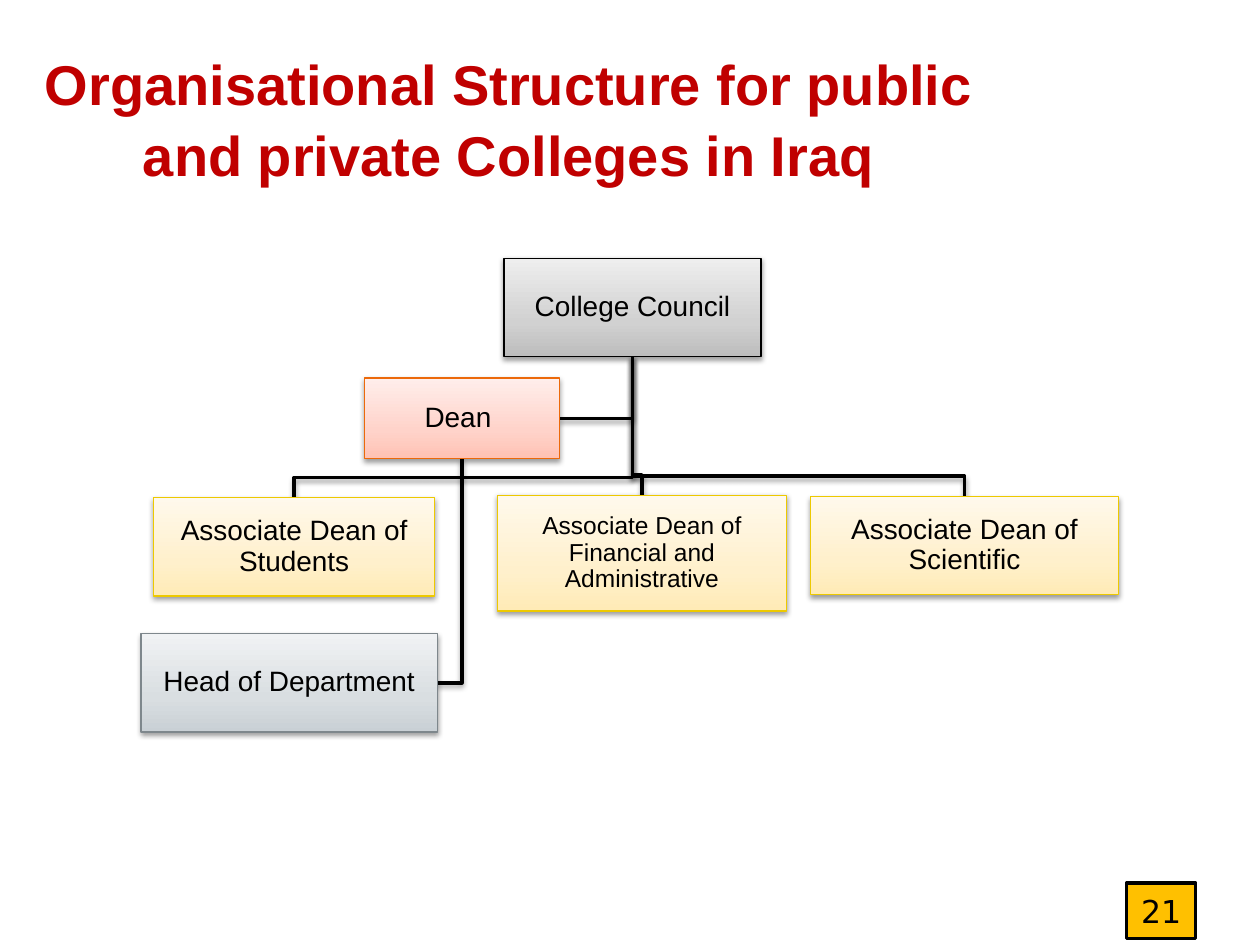
from dataclasses import dataclass

from lxml.etree import SubElement
from pptx import Presentation
from pptx.dml.color import RGBColor
from pptx.enum.shapes import MSO_SHAPE
from pptx.enum.text import MSO_ANCHOR, PP_ALIGN
from pptx.oxml.ns import qn
from pptx.util import Inches, Pt

COLOURS = {"title": "C00000", "ink": "000000", "number": "FFC000"}
# Gradient stops run from the bottom edge to the top edge.
GRADIENTS = {
    "grey": ("BDBDBD", "D1D1D1", "EEEEEE"),
    "yellow": ("FFEBB6", "FFF0CC", "FFF9EC"),
    "red": ("FFC2B4", "FFD3CA", "FFEEEB"),
    "steel": ("C9D0D5", "D9DEE1", "F0F2F4"),
}
OUTLINES = {"grey": "000000", "yellow": "EDC900", "red": "EC690A", "steel": "7E878C"}
STOP_POSITIONS = (0, 35000, 100000)
BUS_GAP = 0.16


@dataclass(frozen=True)
class Role:
    text: str
    left: float
    top: float
    width: float
    height: float
    theme: str
    size: int = 16

    @property
    def centre(self) -> float:
        return self.left + self.width / 2

    @property
    def middle(self) -> float:
        return self.top + self.height / 2

    @property
    def right(self) -> float:
        return self.left + self.width

    @property
    def bottom(self) -> float:
        return self.top + self.height


COUNCIL = Role("College Council", 4, 2.05, 2.04, 0.78, "grey")
DEAN = Role("Dean ", 2.89, 3, 1.55, 0.64, "red")
HEAD = Role("Head of Department", 1.12, 5.03, 2.35, 0.78, "steel")
ASSOCIATES = (
    Role("Associate Dean of Students", 1.22, 3.95, 2.23, 0.78, "yellow"),
    Role("Associate Dean of Financial and Administrative",
         3.95, 3.93, 2.29, 0.92, "yellow", 14),
    Role("Associate Dean of Scientific", 6.43, 3.94, 2.45, 0.78, "yellow"),
)


def rgb(value: str) -> RGBColor:
    return RGBColor.from_string(value)


def add_shadow(shape) -> None:
    shape.shadow.inherit = False
    effects = shape._element.spPr.find(qn("a:effectLst"))
    shadow = SubElement(effects, qn("a:outerShdw"), blurRad=str(Pt(3.1)),
                        dist=str(Pt(1.6)), dir="5400000", rotWithShape="0")
    colour = SubElement(shadow, qn("a:srgbClr"), val=COLOURS["ink"])
    SubElement(colour, qn("a:alpha"), val="38000")


def set_gradient(shape, stops: tuple[str, ...]) -> None:
    shape.fill.gradient()
    shape.fill.gradient_angle = 90
    stop_list = shape._element.spPr.find(".//" + qn("a:gsLst"))
    for old_stop in list(stop_list):
        stop_list.remove(old_stop)
    for position, colour in zip(STOP_POSITIONS, stops):
        stop = SubElement(stop_list, qn("a:gs"), pos=str(position))
        SubElement(stop, qn("a:srgbClr"), val=colour)


def set_outline(shape, colour: str, width: float) -> None:
    shape.line.color.rgb = rgb(colour)
    shape.line.width = Pt(width)


def write(shape, text: str, size: int, font: str = "Arial", colour: str = "ink",
          bold: bool = False, spacing: float = 1.0,
          anchor: MSO_ANCHOR = MSO_ANCHOR.MIDDLE) -> None:
    frame = shape.text_frame
    frame.word_wrap = True
    frame.vertical_anchor = anchor
    paragraph = frame.paragraphs[0]
    paragraph.text = text
    paragraph.alignment = PP_ALIGN.CENTER
    paragraph.line_spacing = spacing
    paragraph.font.name = font
    paragraph.font.size = Pt(size)
    paragraph.font.bold = bold
    paragraph.font.color.rgb = rgb(COLOURS[colour])


def add_link(page, *points: tuple[float, float]) -> None:
    """Draw a bent line through points given in inches."""
    corners = [(Inches(x), Inches(y)) for x, y in points]
    builder = page.shapes.build_freeform(*corners[0])
    builder.add_line_segments(corners[1:], close=False)
    link = builder.convert_to_shape()
    link.fill.background()
    set_outline(link, COLOURS["ink"], 2)
    add_shadow(link)


def add_rectangle(page, left: float, top: float, width: float, height: float):
    return page.shapes.add_shape(MSO_SHAPE.RECTANGLE, Inches(left), Inches(top),
                                 Inches(width), Inches(height))


def add_role(page, role: Role) -> None:
    box = add_rectangle(page, role.left, role.top, role.width, role.height)
    set_gradient(box, GRADIENTS[role.theme])
    set_outline(box, OUTLINES[role.theme], 0.75)
    add_shadow(box)
    frame = box.text_frame
    frame.margin_left = frame.margin_right = Inches(0.01)
    frame.margin_top = frame.margin_bottom = Inches(0.01)
    write(box, role.text, role.size, spacing=0.9)


def add_title(page) -> None:
    title = page.shapes.add_textbox(Inches(0.24), Inches(0.31), Inches(7.6), Inches(0.84))
    write(title, "Organisational Structure for public and private Colleges in Iraq",
          32, colour="title", bold=True, spacing=1.06, anchor=MSO_ANCHOR.TOP)


def add_chart_links(page) -> None:
    start = (COUNCIL.centre, COUNCIL.bottom)
    add_link(page, (DEAN.centre, DEAN.bottom), (DEAN.centre, HEAD.middle),
             (HEAD.right, HEAD.middle))
    add_link(page, start, (COUNCIL.centre, DEAN.middle), (DEAN.right, DEAN.middle))
    for role in reversed(ASSOCIATES):
        bus = role.top - BUS_GAP
        add_link(page, start, (COUNCIL.centre, bus), (role.centre, bus),
                 (role.centre, role.top))


def add_page_number(page) -> None:
    box = add_rectangle(page, 8.94, 7.01, 0.55, 0.44)
    box.shadow.inherit = False
    box.fill.solid()
    box.fill.fore_color.rgb = rgb(COLOURS["number"])
    set_outline(box, COLOURS["ink"], 2)
    write(box, "21", 18, font="DejaVu Sans")


def main() -> None:
    deck = Presentation()
    deck.slide_width, deck.slide_height = Inches(10), Inches(7.5)
    page = deck.slides.add_slide(deck.slide_layouts[6])
    add_title(page)
    add_chart_links(page)
    for role in (COUNCIL, *ASSOCIATES, DEAN, HEAD):
        add_role(page, role)
    add_page_number(page)
    deck.save("out.pptx")


if __name__ == "__main__":
    main()
